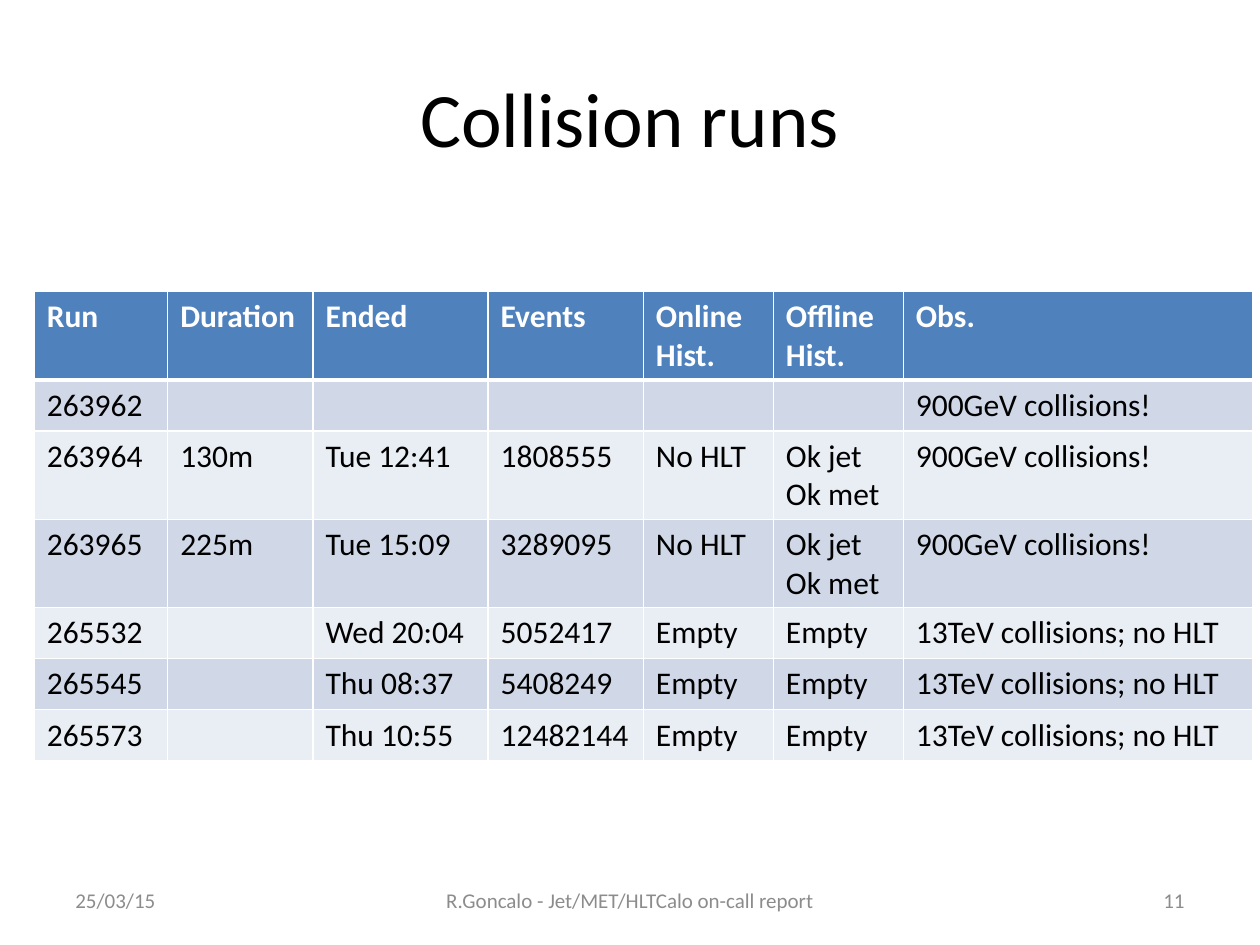
from typing import NamedTuple

from lxml.etree import SubElement
from pptx import Presentation
from pptx.dml.color import RGBColor
from pptx.enum.text import MSO_ANCHOR, PP_ALIGN
from pptx.oxml.ns import qn
from pptx.util import Cm, Pt

FONT = "Calibri"
COLORS = {
    "black": "000000",
    "white": "FFFFFF",
    "grey": "8C8C8C",
    "header": "4F81BD",
    "band_dark": "D0D8E8",
    "band_light": "E9EDF4",
}


class Label(NamedTuple):
    text: str
    left: float
    top: float
    width: float
    height: float
    size: int
    color: str
    align: PP_ALIGN


class Column(NamedTuple):
    heading: str
    width: float


FOOTER_TOP, FOOTER_HEIGHT = 17.65, 1.01
LABELS = [
    Label("Collision runs", 1.27, 0.76, 22.86, 3.18, 44, "black", PP_ALIGN.CENTER),
    Label("25/03/15", 1.27, FOOTER_TOP, 5.93, FOOTER_HEIGHT, 12, "grey", PP_ALIGN.LEFT),
    Label("R.Goncalo - Jet/MET/HLTCalo on-call report", 8.68, FOOTER_TOP, 8.04,
          FOOTER_HEIGHT, 12, "grey", PP_ALIGN.CENTER),
    Label("11", 18.2, FOOTER_TOP, 5.93, FOOTER_HEIGHT, 12, "grey", PP_ALIGN.RIGHT),
]

COLUMNS = [
    Column("Run", 2.69),
    Column("Duration", 2.93),
    Column("Ended", 3.53),
    Column("Events", 3.13),
    Column("Online Hist.", 2.62),
    Column("Offline Hist.", 2.62),
    Column("Obs.", 7.04),
]
LOW_ENERGY = "900GeV collisions!"
HIGH_ENERGY = "13TeV collisions; no HLT"
JET_MET_OK = "Ok jet\nOk met"
RUNS = [
    ("263962", "", "", "", "", "", LOW_ENERGY),
    ("263964", "130m", "Tue 12:41", "1808555", "No HLT", JET_MET_OK, LOW_ENERGY),
    ("263965", "225m", "Tue 15:09", "3289095", "No HLT", JET_MET_OK, LOW_ENERGY),
    ("265532", "", "Wed 20:04", "5052417", "Empty", "Empty", HIGH_ENERGY),
    ("265545", "", "Thu 08:37", "5408249", "Empty", "Empty", HIGH_ENERGY),
    ("265573", "", "Thu 10:55", "12482144", "Empty", "Empty", HIGH_ENERGY),
]
TABLE_LEFT, TABLE_TOP, ROW_HEIGHT = 0.69, 5.88, 1.03


def rgb(name: str) -> RGBColor:
    return RGBColor.from_string(COLORS[name])


def format_text(tf, size: int, color: str, bold: bool = False,
                align: PP_ALIGN = PP_ALIGN.LEFT) -> None:
    for p in tf.paragraphs:
        p.alignment = align
        for r in p.runs:
            r.font.name = FONT
            r.font.size = Pt(size)
            r.font.bold = bold
            r.font.color.rgb = rgb(color)


def add_label(slide, label: Label) -> None:
    sp = slide.shapes.add_textbox(Cm(label.left), Cm(label.top),
                                  Cm(label.width), Cm(label.height))
    tf = sp.text_frame
    tf.word_wrap = True
    tf.vertical_anchor = MSO_ANCHOR.MIDDLE
    tf.text = label.text
    format_text(tf, label.size, label.color, align=label.align)


def set_borders(cell, top: int, bottom: int) -> None:
    tc_pr = cell._tc.get_or_add_tcPr()
    for side, width in (("L", 1), ("R", 1), ("T", top), ("B", bottom)):
        line = SubElement(tc_pr, qn(f"a:ln{side}"), w=str(Pt(width)))
        fill = SubElement(line, qn("a:solidFill"))
        SubElement(fill, qn("a:srgbClr"), val=COLORS["white"])


def add_runs_table(slide) -> None:
    rows = [tuple(column.heading for column in COLUMNS), *RUNS]
    width = sum(column.width for column in COLUMNS)
    table = slide.shapes.add_table(
        len(rows), len(COLUMNS), Cm(TABLE_LEFT), Cm(TABLE_TOP),
        Cm(width), Cm(ROW_HEIGHT * len(rows))).table
    for i, column in enumerate(COLUMNS):
        table.columns[i].width = Cm(column.width)

    for i, values in enumerate(rows):
        table.rows[i].height = Cm(ROW_HEIGHT)
        is_header = i == 0
        band = "header" if is_header else "band_dark" if i % 2 else "band_light"
        for j, value in enumerate(values):
            cell = table.cell(i, j)
            # Thick rule between the header and the first run
            set_borders(cell, top=3 if i == 1 else 1, bottom=3 if is_header else 1)
            cell.fill.solid()
            cell.fill.fore_color.rgb = rgb(band)
            cell.text_frame.text = value
            format_text(cell.text_frame, 18, "white" if is_header else "black", is_header)


def main() -> None:
    prs = Presentation()
    prs.slide_width, prs.slide_height = Cm(25.4), Cm(19.05)
    slide = prs.slides.add_slide(prs.slide_layouts[6])

    # Title and footer
    for label in LABELS:
        add_label(slide, label)

    # Run overview
    add_runs_table(slide)
    prs.save("out.pptx")


if __name__ == "__main__":
    main()
